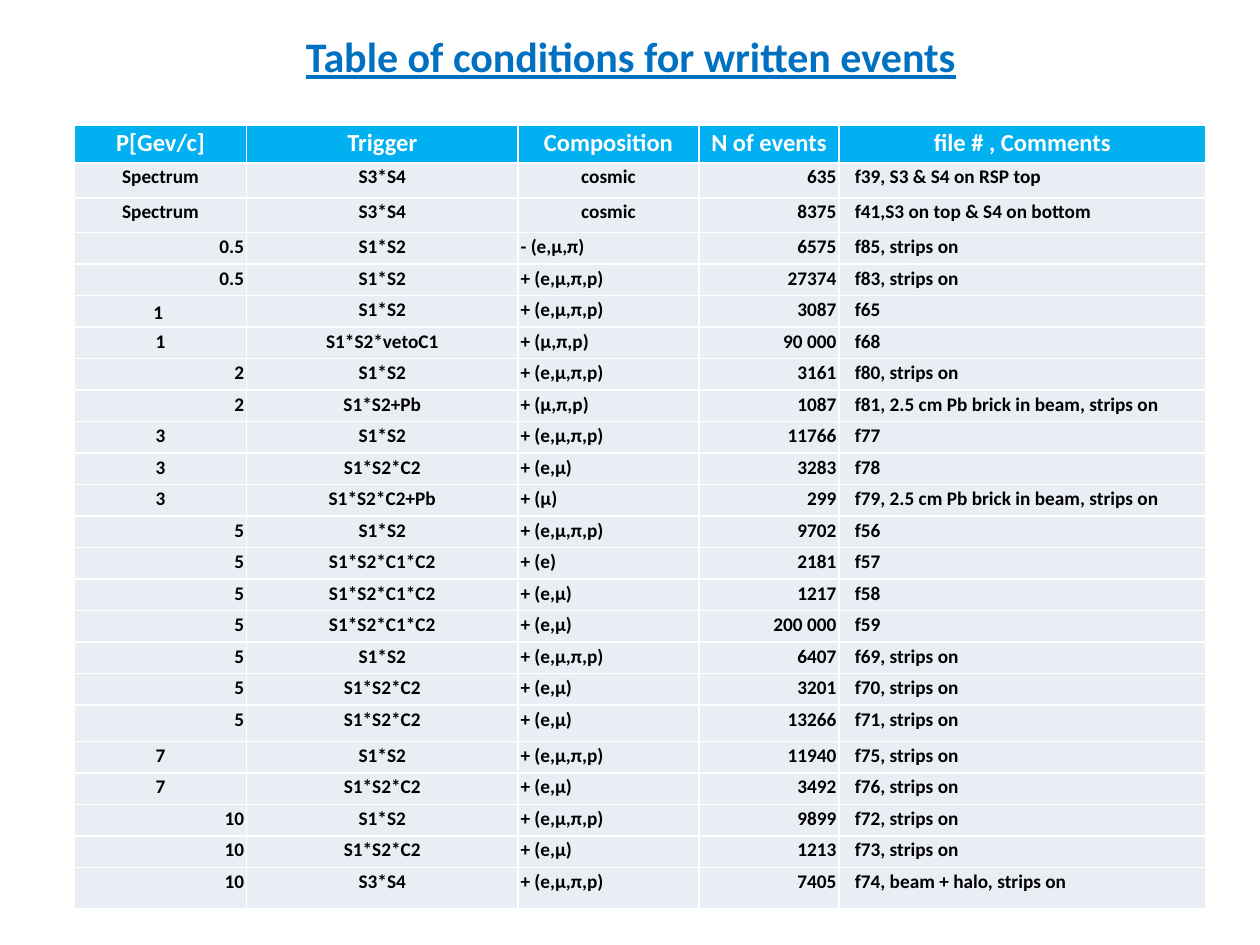
"""Builds a slide with a table of the conditions for written events."""
import lxml.etree
import pptx
import pptx.dml.color
import pptx.enum.text
import pptx.oxml.ns
import pptx.util

Pt = pptx.util.Pt
ALIGN = pptx.enum.text.PP_ALIGN
ANCHOR = pptx.enum.text.MSO_ANCHOR
COLORS = {"title": "0070C0", "header": "00B0F0", "body": "E9EDF4",
          "white": "FFFFFF", "text": "000000"}


def write(frame, text, size=11, color="text", align=ALIGN.LEFT, underline=None):
    para = frame.paragraphs[0]
    para.alignment = align
    span = para.add_run()
    span.text = text
    span.font.name = "Calibri"
    span.font.size = Pt(size)
    span.font.bold = True
    span.font.underline = underline
    span.font.color.rgb = pptx.dml.color.RGBColor.from_string(COLORS[color])


def add_borders(cell, color="white", width=1):
    properties = cell._tc.get_or_add_tcPr()
    for side in ("lnL", "lnR", "lnT", "lnB"):
        line = lxml.etree.SubElement(properties, pptx.oxml.ns.qn(f"a:{side}"), w=str(Pt(width)))
        fill = lxml.etree.SubElement(line, pptx.oxml.ns.qn("a:solidFill"))
        lxml.etree.SubElement(fill, pptx.oxml.ns.qn("a:srgbClr"), val=COLORS[color])


deck = pptx.Presentation()
deck.slide_width, deck.slide_height = Pt(720), Pt(540)
page = deck.slides.add_slide(deck.slide_layouts[5])

title = page.shapes.title
title.left, title.top, title.width, title.height = Pt(36.5), Pt(3.5), Pt(648), Pt(57)
title.text_frame.vertical_anchor = ANCHOR.MIDDLE
write(title.text_frame, "Table of conditions for written events", size=24,
      color="title", align=ALIGN.CENTER, underline=True)

records = [
    ("P[Gev/c]", "Trigger", "Composition", "N of events", "file # , Comments"),
    ("Spectrum", "S3*S4", "cosmic", "635", "f39, S3 & S4 on RSP top"),
    ("Spectrum", "S3*S4", "cosmic", "8375", "f41,S3 on top & S4 on bottom"),
    ("0.5", "S1*S2", "- (e,μ,π)", "6575", "f85, strips on"),
    ("0.5", "S1*S2", "+ (e,μ,π,p)", "27374", "f83, strips on"),
    ("1", "S1*S2", "+ (e,μ,π,p)", "3087", "f65"),
    ("1", "S1*S2*vetoC1", "+ (μ,π,p)", "90 000", "f68"),
    ("2", "S1*S2", "+ (e,μ,π,p)", "3161", "f80, strips on"),
    ("2", "S1*S2+Pb", "+ (μ,π,p)", "1087", "f81, 2.5 cm Pb brick in beam, strips on"),
    ("3", "S1*S2", "+ (e,μ,π,p)", "11766", "f77"),
    ("3", "S1*S2*C2", "+ (e,μ)", "3283", "f78"),
    ("3", "S1*S2*C2+Pb", "+ (μ)", "299", "f79, 2.5 cm Pb brick in beam, strips on"),
    ("5", "S1*S2", "+ (e,μ,π,p)", "9702", "f56"),
    ("5", "S1*S2*C1*C2", "+ (e)", "2181", "f57"),
    ("5", "S1*S2*C1*C2", "+ (e,μ)", "1217", "f58"),
    ("5", "S1*S2*C1*C2", "+ (e,μ)", "200 000", "f59"),
    ("5", "S1*S2", "+ (e,μ,π,p)", "6407", "f69, strips on"),
    ("5", "S1*S2*C2", "+ (e,μ)", "3201", "f70, strips on"),
    ("5", "S1*S2*C2", "+ (e,μ)", "13266", "f71, strips on"),
    ("7", "S1*S2", "+ (e,μ,π,p)", "11940", "f75, strips on"),
    ("7", "S1*S2*C2", "+ (e,μ)", "3492", "f76, strips on"),
    ("10", "S1*S2", "+ (e,μ,π,p)", "9899", "f72, strips on"),
    ("10", "S1*S2*C2", "+ (e,μ)", "1213", "f73, strips on"),
    ("10", "S3*S4", "+ (e,μ,π,p)", "7405", "f74, beam + halo, strips on"),
]
column_widths = [98.5, 155, 103.5, 80, 209.5]
column_aligns = [ALIGN.RIGHT, ALIGN.CENTER, ALIGN.LEFT, ALIGN.RIGHT, ALIGN.LEFT]
centered_values = {"Spectrum", "cosmic", "1", "3", "7"}
special_heights = {0: 21.6, 1: 20, 2: 19.8, 18: 20.8, 23: 23.6}
row_heights = [special_heights.get(index, 18) for index in range(len(records))]

table = page.shapes.add_table(len(records), len(column_widths), Pt(42.5), Pt(71.5),
                              Pt(sum(column_widths)), Pt(sum(row_heights))).table
table.horz_banding = False
for column, width in zip(table.columns, column_widths):
    column.width = Pt(width)

for row_index, (record, height) in enumerate(zip(records, row_heights)):
    table.rows[row_index].height = Pt(height)
    is_header = row_index == 0
    for column_index, text in enumerate(record):
        cell = table.cell(row_index, column_index)
        cell.margin_left = cell.margin_right = cell.margin_top = cell.margin_bottom = Pt(1.5)
        add_borders(cell)
        cell.fill.solid()
        cell.fill.fore_color.rgb = pptx.dml.color.RGBColor.from_string(
            COLORS["header" if is_header else "body"])
        if is_header:
            write(cell.text_frame, text, size=14, color="white", align=ALIGN.CENTER)
        else:
            centered = text in centered_values
            write(cell.text_frame, text,
                  align=ALIGN.CENTER if centered else column_aligns[column_index])
            if column_index == 4:
                cell.margin_left = Pt(9)

first_one = table.cell(5, 0)
first_one.vertical_anchor = ANCHOR.BOTTOM
first_one.margin_right = Pt(4)

deck.save("out.pptx")
